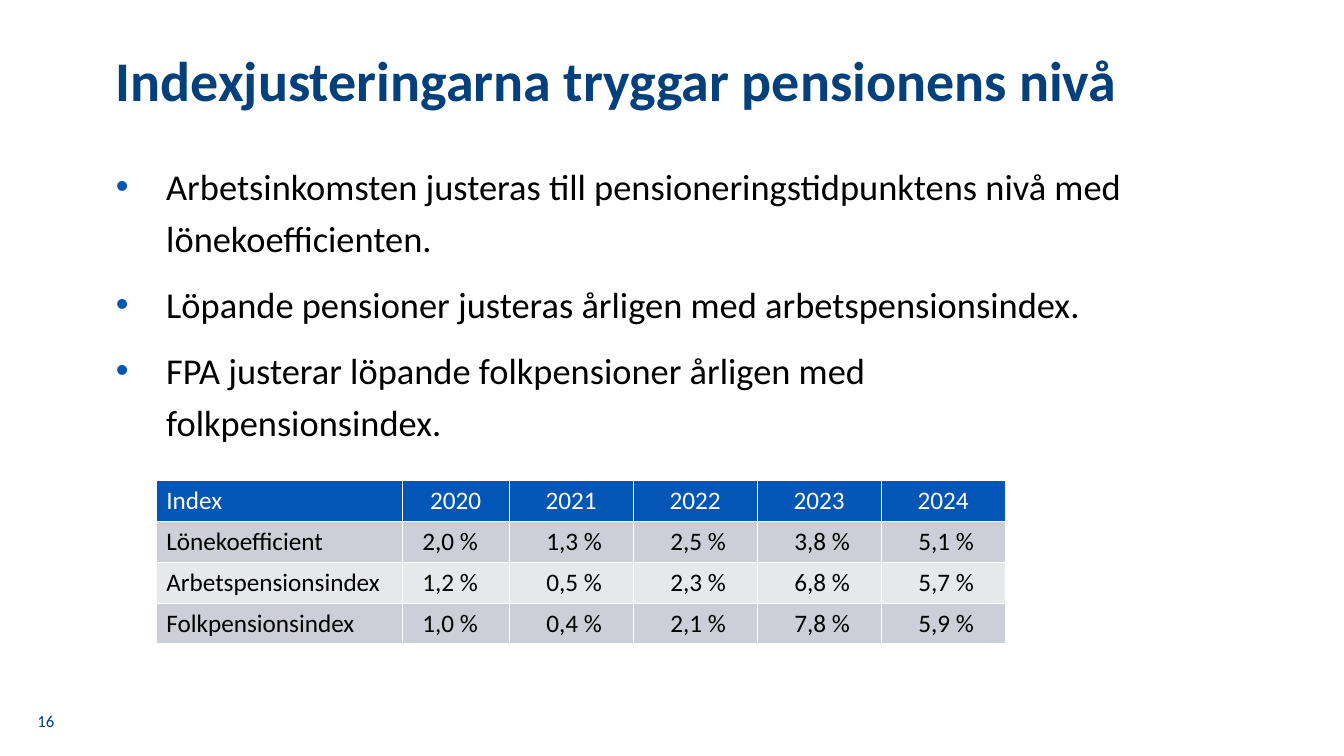
from dataclasses import dataclass

from lxml.etree import SubElement
from pptx import Presentation
from pptx.dml.color import RGBColor
from pptx.enum.text import MSO_ANCHOR, PP_ALIGN
from pptx.oxml.ns import qn
from pptx.util import Inches, Pt

TITLE = "Indexjusteringarna tryggar pensionens nivå"
BULLETS = [
    "Arbetsinkomsten justeras till pensioneringstidpunktens nivå med lönekoefficienten.",
    "Löpande pensioner justeras årligen med arbetspensionsindex.",
    "FPA justerar löpande folkpensioner årligen med folkpensionsindex.",
]
INDEX_ROWS = [
    ("Index", "2020", "2021", "2022", "2023", "2024"),
    ("Lönekoefficient", "2,0 %", "1,3 %", "2,5 %", "3,8 %", "5,1 %"),
    ("Arbetspensionsindex", "1,2 %", "0,5 %", "2,3 %", "6,8 %", "5,7 %"),
    ("Folkpensionsindex", "1,0 %", "0,4 %", "2,1 %", "7,8 %", "5,9 %"),
]
COL_WIDTHS = [2.44, 1.06] + [1.23] * 4
ROW_HEIGHT = 0.405
PAGE = "16"


@dataclass(frozen=True)
class Theme:
    font: str = "Calibri"
    navy: str = "03407C"
    blue: str = "0356B5"
    black: str = "000000"
    white: str = "FFFFFF"
    bands: tuple = ("CCCFD7", "E7E8EC")
    title: int = 40
    body: int = 26
    table: int = 18
    page: int = 12


T = Theme()


def style(p, size, color, bold=False):
    for r in p.runs:
        r.font.name = T.font
        r.font.size = Pt(size)
        r.font.bold = bold
        r.font.color.rgb = RGBColor.from_string(color)


def add_bullet(p):
    pPr = p._p.get_or_add_pPr()
    pPr.set("marL", str(Inches(0.5)))
    pPr.set("indent", str(Inches(-0.5)))
    color = SubElement(pPr, qn("a:buClr"))
    SubElement(color, qn("a:srgbClr"), val=T.blue)
    SubElement(pPr, qn("a:buFont"), typeface="Arial")
    SubElement(pPr, qn("a:buChar"), char="•")


def add_borders(cell):
    tcPr = cell._tc.get_or_add_tcPr()
    for side in ("lnL", "lnR", "lnT", "lnB"):
        ln = SubElement(tcPr, qn(f"a:{side}"), w=str(Pt(1)))
        fill = SubElement(ln, qn("a:solidFill"))
        SubElement(fill, qn("a:srgbClr"), val=T.white)


def add_title(s):
    sp = s.shapes.title
    sp.left, sp.top, sp.width, sp.height = map(Inches, (1.05, 0.48, 10.43, 0.84))
    tf = sp.text_frame
    tf.text = TITLE
    tf.vertical_anchor = MSO_ANCHOR.TOP
    p = tf.paragraphs[0]
    p.alignment = PP_ALIGN.LEFT
    p.line_spacing = 0.9
    style(p, T.title, T.navy, bold=True)


def add_bullets(s):
    sp = s.shapes.add_textbox(*map(Inches, (1.05, 1.49, 10.29, 2.95)))
    tf = sp.text_frame
    tf.word_wrap = True
    for i, text in enumerate(BULLETS):
        p = tf.add_paragraph() if i else tf.paragraphs[0]
        p.text = text
        add_bullet(p)
        p.line_spacing = 1.2
        if i:
            p.space_before = Pt(9.5)
        style(p, T.body, T.black)


def add_index_table(s):
    size = (sum(COL_WIDTHS), ROW_HEIGHT * len(INDEX_ROWS))
    frame = s.shapes.add_table(len(INDEX_ROWS), len(COL_WIDTHS),
                               *map(Inches, (1.55, 4.77, *size)))
    table = frame.table
    for col, width in zip(table.columns, COL_WIDTHS):
        col.width = Inches(width)
    for i, values in enumerate(INDEX_ROWS):
        table.rows[i].height = Inches(ROW_HEIGHT)
        for j, value in enumerate(values):
            cell = table.cell(i, j)
            cell.text = value
            add_borders(cell)
            cell.fill.solid()
            fill = T.bands[(i - 1) % 2] if i else T.blue
            cell.fill.fore_color.rgb = RGBColor.from_string(fill)
            p = cell.text_frame.paragraphs[0]
            if j:
                p.alignment = PP_ALIGN.RIGHT if i else PP_ALIGN.CENTER
                cell.margin_left = Inches(0.08)
                cell.margin_right = Inches(0.31 if i else 0.08)
            elif i:
                cell.vertical_anchor = MSO_ANCHOR.MIDDLE
            style(p, T.table, T.black if i else T.white)


def add_page_number(s):
    sp = s.shapes.add_textbox(*map(Inches, (0.2, 6.95, 0.51, 0.4)))
    tf = sp.text_frame
    tf.word_wrap = True
    tf.text = PAGE
    tf.vertical_anchor = MSO_ANCHOR.MIDDLE
    p = tf.paragraphs[0]
    p.alignment = PP_ALIGN.CENTER
    style(p, T.page, T.navy)


def main():
    prs = Presentation()
    prs.slide_width, prs.slide_height = Inches(13.33), Inches(7.5)
    s = prs.slides.add_slide(prs.slide_layouts[5])
    add_title(s)
    add_bullets(s)
    add_index_table(s)
    add_page_number(s)
    prs.save("out.pptx")


if __name__ == "__main__":
    main()
